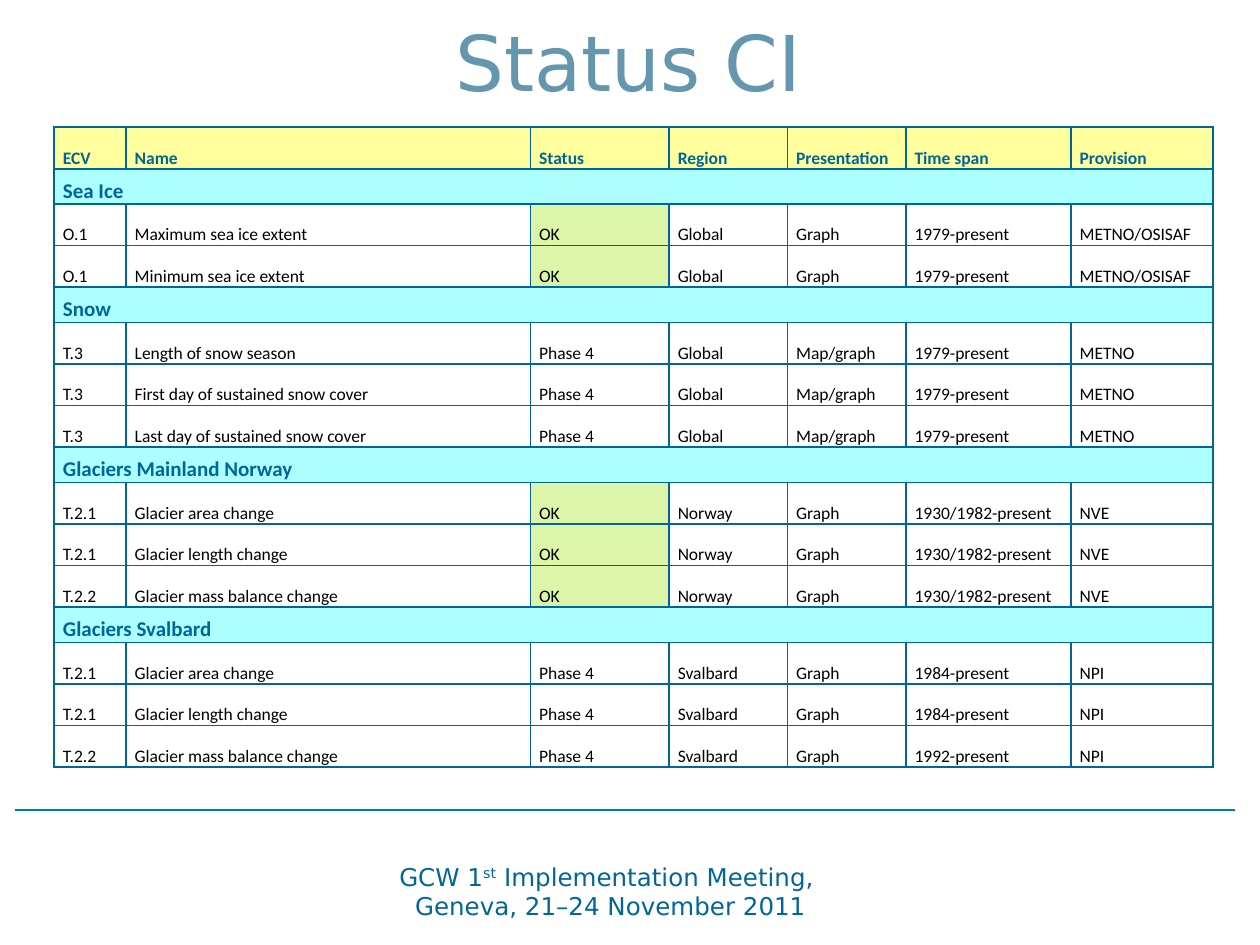
from pptx import Presentation
from pptx.dml.color import RGBColor
from pptx.enum.shapes import MSO_CONNECTOR
from pptx.enum.text import MSO_ANCHOR, PP_ALIGN
from pptx.oxml import parse_xml
from pptx.oxml.ns import nsdecls
from pptx.util import Inches, Pt

TITLE_BLUE = RGBColor(0x64, 0x97, 0xAE)
TEXT_BLUE = RGBColor(0x00, 0x66, 0x99)
RULE_BLUE = RGBColor(0x00, 0x77, 0xBE)
BLACK = RGBColor(0x00, 0x00, 0x00)
HEADER_YELLOW = RGBColor(0xFF, 0xFF, 0x9E)
SECTION_CYAN = RGBColor(0xAD, 0xFF, 0xFF)
OK_GREEN = RGBColor(0xDC, 0xF5, 0xA9)

HEADINGS = ["ECV", "Name", "Status", "Region", "Presentation", "Time span", "Provision"]
COLUMN_WIDTHS = [0.57, 3.21, 1.1, 0.94, 0.94, 1.31, 1.13]
ROW_HEIGHT, SECTION_HEIGHT = 0.33, 0.28

# Section title, (status, region, presentation), provision, indicators
SECTIONS = [
    ("Sea Ice", ("OK", "Global", "Graph"), "METNO/OSISAF", [
        ("O.1", "Maximum sea ice extent", "1979-present"),
        ("O.1", "Minimum sea ice extent", "1979-present")]),
    ("Snow", ("Phase 4", "Global", "Map/graph"), "METNO", [
        ("T.3", "Length of snow season", "1979-present"),
        ("T.3", "First day of sustained snow cover", "1979-present"),
        ("T.3", "Last day of sustained snow cover", "1979-present")]),
    ("Glaciers Mainland Norway", ("OK", "Norway", "Graph"), "NVE", [
        ("T.2.1", "Glacier area change", "1930/1982-present"),
        ("T.2.1", "Glacier length change", "1930/1982-present"),
        ("T.2.2", "Glacier mass balance change", "1930/1982-present")]),
    ("Glaciers Svalbard", ("Phase 4", "Svalbard", "Graph"), "NPI", [
        ("T.2.1", "Glacier area change", "1984-present"),
        ("T.2.1", "Glacier length change", "1984-present"),
        ("T.2.2", "Glacier mass balance change", "1992-present")]),
]


def add_span(para, text, font="Calibri", size=10, color=BLACK, bold=False, superscript=False):
    span = para.add_run()
    span.text = text
    span.font.name = font
    span.font.size = Pt(size)
    span.font.bold = bold
    span.font.color.rgb = color
    if superscript:
        span._r.get_or_add_rPr().set("baseline", "30000")


class SlideBuilder:
    """Holds the style and the current slide, and adds each kind of element."""

    display_font = "DejaVu Sans"

    def __init__(self, page):
        self.page = page

    def text_box(self, left, top, width, height, anchor=MSO_ANCHOR.TOP):
        box = self.page.shapes.add_textbox(Inches(left), Inches(top), Inches(width), Inches(height))
        box.text_frame.word_wrap = True
        box.text_frame.vertical_anchor = anchor
        para = box.text_frame.paragraphs[0]
        para.alignment = PP_ALIGN.CENTER
        return para

    def rule(self, left, right, top):
        line = self.page.shapes.add_connector(
            MSO_CONNECTOR.STRAIGHT, Inches(left), Inches(top), Inches(right), Inches(top))
        line.line.color.rgb = RULE_BLUE
        line.line.width = Pt(1.5)
        line._element.spPr.append(parse_xml(f"<a:effectLst {nsdecls('a')}/>"))

    def table(self, left, top, widths, heights):
        table = self.page.shapes.add_table(
            len(heights), len(widths), Inches(left), Inches(top),
            Inches(sum(widths)), Inches(sum(heights))).table
        table.first_row = table.horz_banding = False
        for column, width in zip(table.columns, widths):
            column.width = Inches(width)
        for row, height in zip(table.rows, heights):
            row.height = Inches(height)
        for cell in table.iter_cells():
            self.cell_style(cell)
        return table

    def cell_style(self, cell):
        cell.margin_left = cell.margin_right = Inches(0.07)
        cell.margin_top = cell.margin_bottom = 0
        cell.vertical_anchor = MSO_ANCHOR.BOTTOM
        properties = cell._tc.get_or_add_tcPr()
        for side in ("lnL", "lnR", "lnT", "lnB"):
            properties.append(parse_xml(
                f'<a:{side} {nsdecls("a")} w="{Pt(1)}"><a:solidFill>'
                f'<a:srgbClr val="{TEXT_BLUE}"/></a:solidFill></a:{side}>'))
        cell.fill.background()

    def fill_cell(self, cell, text, fill=None, **style):
        add_span(cell.text_frame.paragraphs[0], text, **style)
        if fill is not None:
            cell.fill.solid()
            cell.fill.fore_color.rgb = fill

    def status_table(self, left, top):
        heights = [ROW_HEIGHT]
        for section in SECTIONS:
            heights += [SECTION_HEIGHT] + [ROW_HEIGHT] * len(section[-1])
        table = self.table(left, top, COLUMN_WIDTHS, heights)
        for column, heading in enumerate(HEADINGS):
            self.fill_cell(table.cell(0, column), heading, HEADER_YELLOW, color=TEXT_BLUE, bold=True)
        row = 1
        for title, shared, provision, indicators in SECTIONS:
            band = table.cell(row, 0)
            band.merge(table.cell(row, len(HEADINGS) - 1))
            self.fill_cell(band, title, SECTION_CYAN, size=12, color=TEXT_BLUE, bold=True)
            for row, (code, name, period) in enumerate(indicators, row + 1):
                for column, text in enumerate([code, name, *shared, period, provision]):
                    self.fill_cell(table.cell(row, column), text, OK_GREEN if text == "OK" else None)
            row += 1


def main():
    deck = Presentation()
    deck.slide_width, deck.slide_height = Inches(10), Inches(7.5)
    builder = SlideBuilder(deck.slides.add_slide(deck.slide_layouts[6]))

    builder.rule(0.12, 9.8, 6.43)
    title = builder.text_box(0.48, 0.11, 9.02, 0.8, MSO_ANCHOR.BOTTOM)
    title.line_spacing = 0.9
    add_span(title, "Status CI", font=builder.display_font, size=44, color=TITLE_BLUE)

    footer = builder.text_box(2.64, 6.79, 4.41, 0.5)
    style = dict(font=builder.display_font, size=14, color=TEXT_BLUE)
    add_span(footer, "GCW 1", **style)
    add_span(footer, "st", superscript=True, **style)
    add_span(footer, " Implementation Meeting, ", **style)
    footer.add_line_break()
    add_span(footer, "Geneva, 21–24 November 2011", **style)

    builder.status_table(0.43, 1.01)
    deck.save("out.pptx")


if __name__ == "__main__":
    main()
